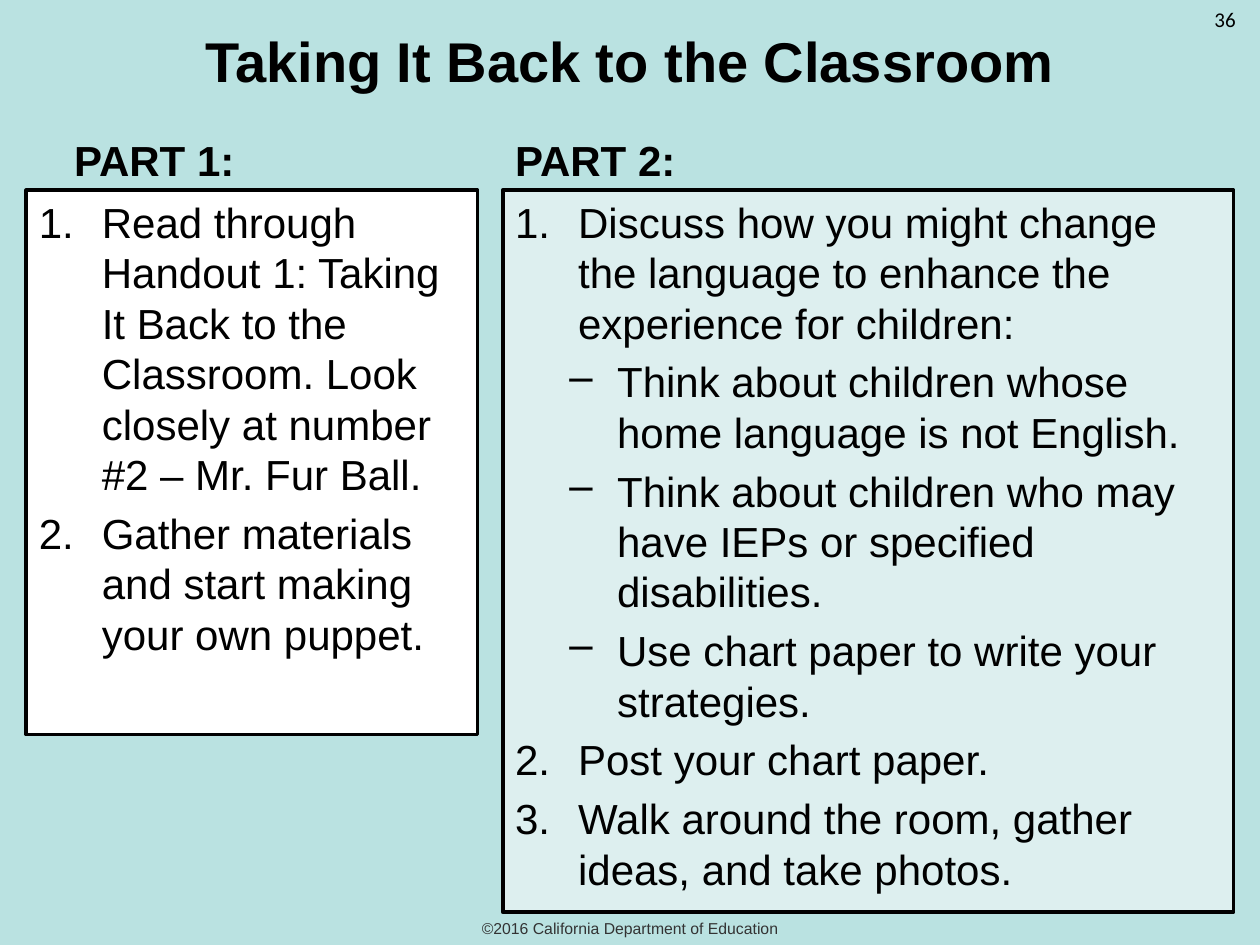
import dataclasses

import lxml.etree
import pptx
import pptx.dml.color
import pptx.enum.shapes
import pptx.enum.text
import pptx.oxml.ns
import pptx.util

ALIGN = pptx.enum.text.PP_ALIGN
ANCHOR = pptx.enum.text.MSO_ANCHOR


@dataclasses.dataclass(frozen=True)
class Theme:
    font: str = "Arial"
    number_font: str = "Calibri"
    background: str = "BAE2E1"
    ink: str = "000000"
    footer_ink: str = "333333"
    first_panel: str = "FFFFFF"
    second_panel: str = "DDEFEF"
    title_size: float = 32
    body_size: float = 24
    number_size: float = 12
    footer_size: float = 9
    body_leading: float = 28.8
    body_gap: float = 4.8
    border: float = 2.25


THEME = Theme()
SLIDE_WIDTH, SLIDE_HEIGHT = 10, 7.5
FIRST_COLUMN, SECOND_COLUMN = 0.21, 3.99
HEADING_TOP, HEADING_WIDTH, HEADING_HEIGHT = 0.82, 4.42, 0.7
PANEL_TOP = 1.51

NUMBERED, DASHED = 0, 1
LIST_INDENTS = {NUMBERED: (0.5, -0.5), DASHED: (0.81, -0.38)}

FIRST_STEPS = [
    (NUMBERED, "Read through Handout 1: Taking It Back to the Classroom. "
               "Look closely at number #2 – Mr. Fur Ball."),
    (NUMBERED, "Gather materials and start making your own puppet."),
]
SECOND_STEPS = [
    (NUMBERED, "Discuss how you might change the language to enhance "
               "the experience for children:"),
    (DASHED, "Think about children whose home language is not English."),
    (DASHED, "Think about children who may have IEPs or specified disabilities."),
    (DASHED, "Use chart paper to write your strategies."),
    (NUMBERED, "Post your chart paper."),
    (NUMBERED, "Walk around the room, gather ideas, and take photos."),
]


def color(value):
    return pptx.dml.color.RGBColor.from_string(value)


def box(left, top, width, height):
    return [pptx.util.Inches(length) for length in (left, top, width, height)]


def style(paragraph, size, ink=THEME.ink, font=THEME.font, bold=False):
    paragraph.font.name = font
    paragraph.font.size = pptx.util.Pt(size)
    paragraph.font.color.rgb = color(ink)
    paragraph.font.bold = bold


def add_label(slide, text, bounds, size, anchor=ANCHOR.MIDDLE,
              align=ALIGN.LEFT, **look):
    frame = slide.shapes.add_textbox(*box(*bounds)).text_frame
    frame.word_wrap = True
    frame.vertical_anchor = anchor
    paragraph = frame.paragraphs[0]
    paragraph.text = text
    paragraph.alignment = align
    style(paragraph, size, **look)


def add_heading(slide, text, left):
    add_label(slide, text, (left, HEADING_TOP, HEADING_WIDTH, HEADING_HEIGHT),
              THEME.body_size, anchor=ANCHOR.BOTTOM, bold=True)


def set_marker(paragraph, level):
    margin, indent = LIST_INDENTS[level]
    properties = paragraph._p.get_or_add_pPr()
    properties.set("marL", str(pptx.util.Inches(margin)))
    properties.set("indent", str(pptx.util.Inches(indent)))
    tag, attributes = {
        NUMBERED: ("a:buAutoNum", {"type": "arabicPeriod"}),
        DASHED: ("a:buChar", {"char": "–"}),
    }[level]
    marker = lxml.etree.Element(pptx.oxml.ns.qn(tag), attributes)
    properties.find(pptx.oxml.ns.qn("a:defRPr")).addprevious(marker)


def add_panel(slide, steps, bounds, fill):
    shape = slide.shapes.add_shape(
        pptx.enum.shapes.MSO_SHAPE.RECTANGLE, *box(*bounds))
    shape.shadow.inherit = False
    shape.fill.solid()
    shape.fill.fore_color.rgb = color(fill)
    shape.line.color.rgb = color(THEME.ink)
    shape.line.width = pptx.util.Pt(THEME.border)
    frame = shape.text_frame
    frame.word_wrap = True
    frame.vertical_anchor = ANCHOR.TOP
    for index, (level, text) in enumerate(steps):
        paragraph = frame.add_paragraph() if index else frame.paragraphs[0]
        paragraph.text = text
        paragraph.level = level
        paragraph.alignment = ALIGN.LEFT
        paragraph.line_spacing = pptx.util.Pt(THEME.body_leading)
        paragraph.space_before = pptx.util.Pt(THEME.body_gap if index else 0)
        style(paragraph, THEME.body_size)
        set_marker(paragraph, level)


def main():
    presentation = pptx.Presentation()
    presentation.slide_width = pptx.util.Inches(SLIDE_WIDTH)
    presentation.slide_height = pptx.util.Inches(SLIDE_HEIGHT)
    slide = presentation.slides.add_slide(presentation.slide_layouts[6])
    slide.background.fill.solid()
    slide.background.fill.fore_color.rgb = color(THEME.background)

    add_label(slide, "Taking It Back to the Classroom", (0.5, -0.02, 9, 1),
              THEME.title_size, align=ALIGN.CENTER, bold=True)
    add_heading(slide, "PART 1:", 0.49)
    add_panel(slide, FIRST_STEPS, (FIRST_COLUMN, PANEL_TOP, 3.58, 4.32),
              THEME.first_panel)
    add_heading(slide, "PART 2:", SECOND_COLUMN)
    add_panel(slide, SECOND_STEPS, (SECOND_COLUMN, PANEL_TOP, 5.8, 5.73),
              THEME.second_panel)
    add_label(slide, "©2016 California Department of Education",
              (0, 7.24, SLIDE_WIDTH, 0.25), THEME.footer_size,
              align=ALIGN.CENTER, ink=THEME.footer_ink)
    add_label(slide, "36", (9.54, 0, 0.46, 0.4), THEME.number_size,
              anchor=ANCHOR.TOP, font=THEME.number_font)
    presentation.save("out.pptx")


if __name__ == "__main__":
    main()
